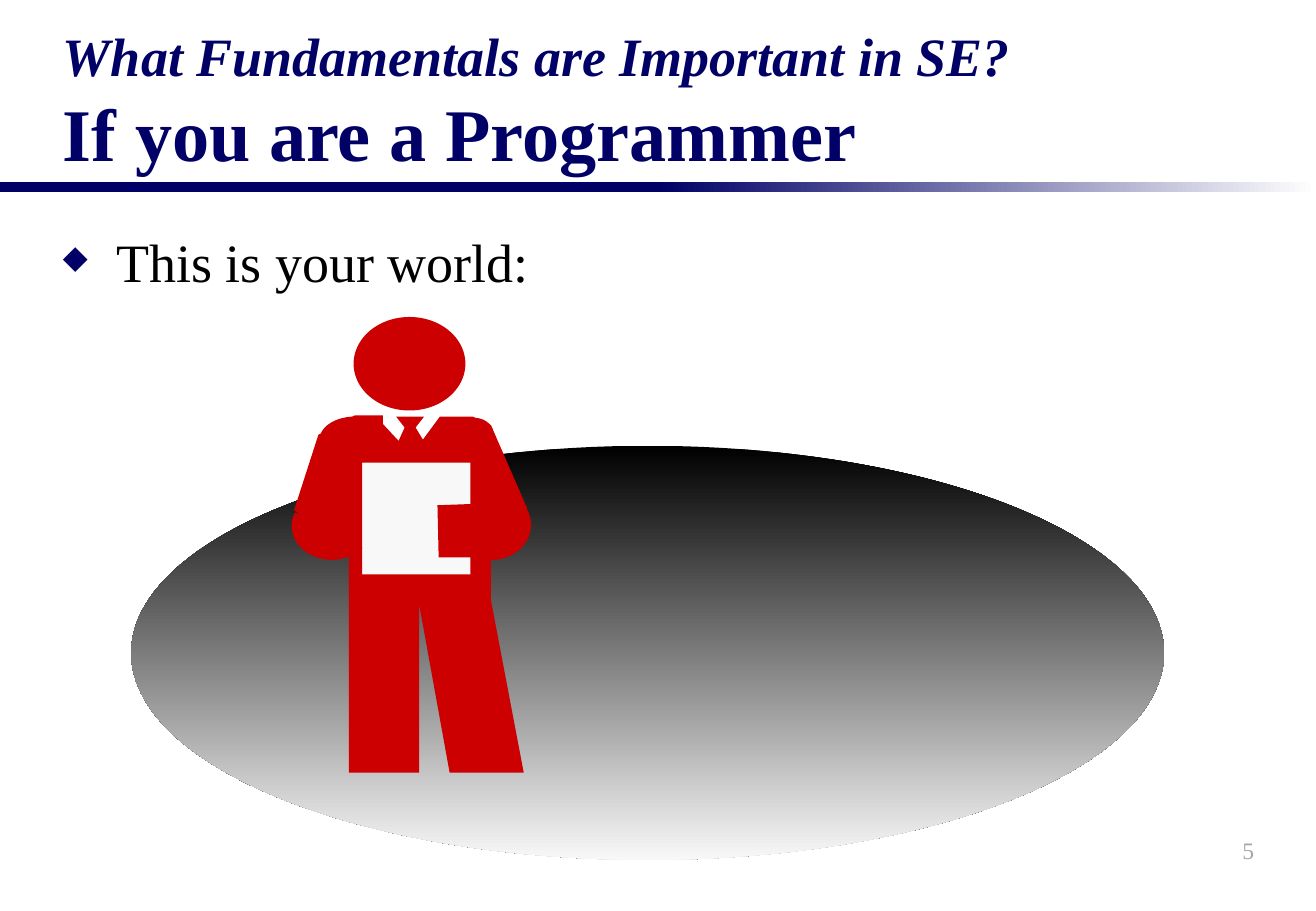
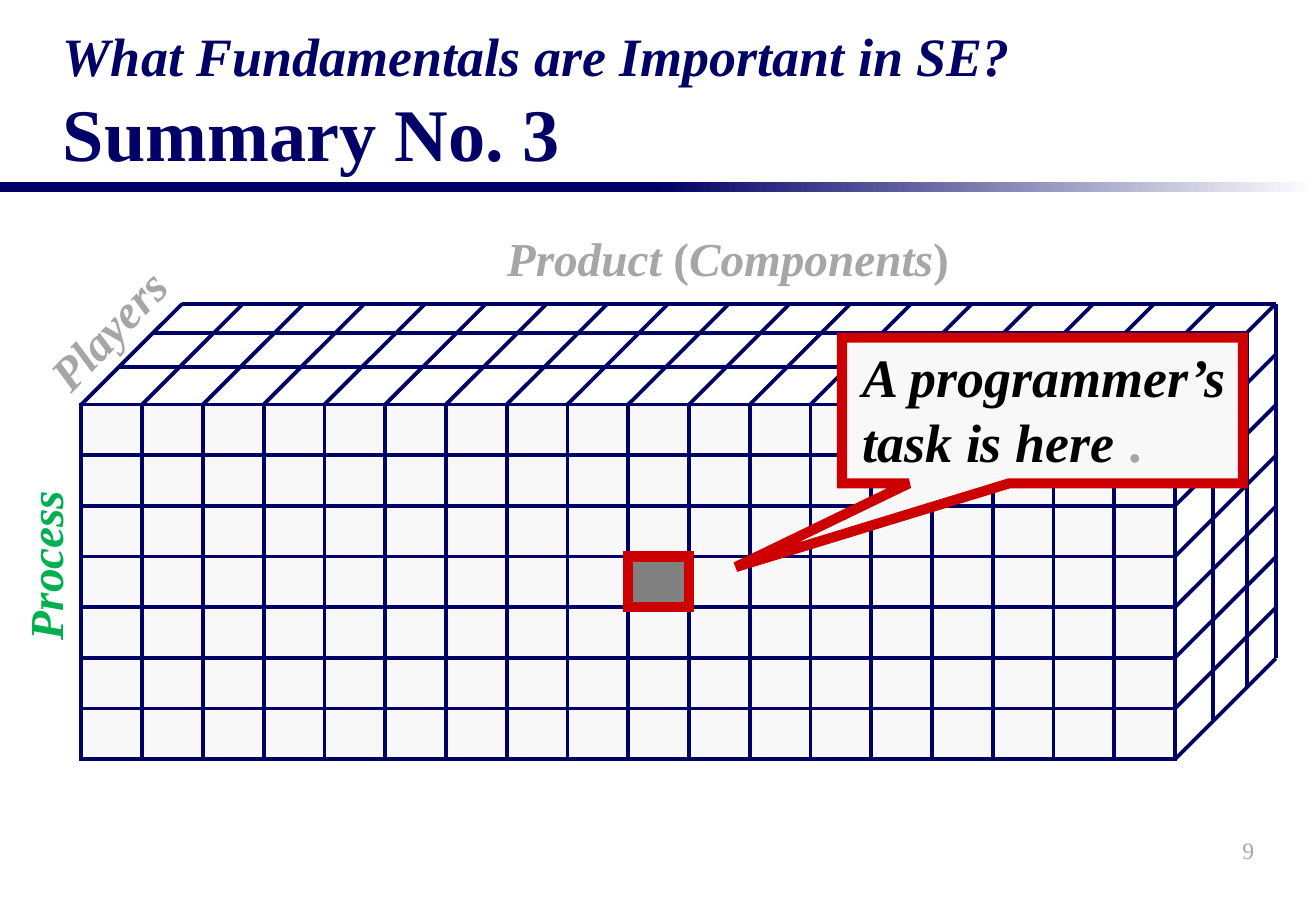
import dataclasses
import math
import typing

import pptx
import pptx.dml.color
import pptx.enum.shapes
import pptx.enum.text
import pptx.oxml.ns
import pptx.slide
import pptx.util
from lxml import etree

Inches = pptx.util.Inches
RGBColor = pptx.dml.color.RGBColor
Shapes = pptx.enum.shapes.MSO_SHAPE
Align = pptx.enum.text.PP_ALIGN
Anchor = pptx.enum.text.MSO_ANCHOR
qn = pptx.oxml.ns.qn

NAVY = RGBColor(0x00, 0x00, 0x66)
WHITE = RGBColor(0xFF, 0xFF, 0xFF)
BLACK = RGBColor(0x00, 0x00, 0x00)
PALE = RGBColor(0xF8, 0xF8, 0xF8)
RED = RGBColor(0xCC, 0x00, 0x00)
GREEN = RGBColor(0x00, 0xB0, 0x50)
LIGHT_GRAY = RGBColor(0xA6, 0xA6, 0xA6)
MID_GRAY = RGBColor(0x80, 0x80, 0x80)
FONT = "Times New Roman"
TOPIC = "What Fundamentals are Important in SE?"

SUIT_OUTLINE = [
    (3.33, 3.52), (3.28, 3.63), (3.15, 3.49), (3.15, 3.42), (2.92, 3.42),
    (2.62, 3.58), (2.42, 4.2), (2.66, 4.39), (2.87, 4.58), (2.87, 6.36),
    (3.45, 6.36), (3.45, 4.98), (3.7, 6.36), (4.31, 6.36), (4.04, 4.94),
    (4.04, 4.59), (4.34, 4.19), (3.87, 4.15), (3.6, 4.16), (3.61, 4.59),
    (3.87, 4.59), (3.87, 4.73), (2.98, 4.73), (2.98, 3.81), (3.87, 3.81),
    (3.87, 4.15), (4.34, 4.19), (4.04, 3.5), (3.89, 3.43), (3.62, 3.43),
    (3.48, 3.62), (3.42, 3.52), (3.49, 3.43), (3.26, 3.43),
]

CUBE_LEFT, CUBE_TOP = 0.67, 3.33
CUBE_WIDTH, CUBE_HEIGHT = 9.0, 2.92
COLUMNS, ROWS = 18, 7
COLUMN_WIDTH = CUBE_WIDTH / COLUMNS
ROW_HEIGHT = CUBE_HEIGHT / ROWS
DEPTHS = (0.31, 0.59, 0.83)


class Box(typing.NamedTuple):
    left: float
    top: float
    width: float
    height: float

    def lengths(self) -> list[int]:
        return [Inches(value) for value in self]


@dataclasses.dataclass(frozen=True)
class Run:
    text: str
    size: float
    color: RGBColor
    bold: bool = False
    italic: bool = False
    break_before: bool = False


@dataclasses.dataclass(frozen=True)
class Joint:
    center_x: float
    center_y: float
    radius_x: float
    radius_y: float
    start: int
    end: int

    def points(self) -> list[tuple[float, float]]:
        angles = [math.radians(self.start + (self.end - self.start) * step / 24)
                  for step in range(25)]
        arc = [(self.center_x + self.radius_x * math.cos(angle),
                self.center_y + self.radius_y * math.sin(angle)) for angle in angles]
        return [*arc, (self.center_x, self.center_y)]


JOINTS = [
    Joint(3.9, 3.57, 0.16, 0.13, -92, 0),
    Joint(2.92, 3.62, 0.29, 0.19, 174, 282),
    Joint(2.73, 4.33, 0.33, 0.28, 40, 203),
    Joint(4.05, 4.32, 0.32, 0.29, -67, 120),
]


def write_text(shape, runs: list[Run], *, align=Align.LEFT, anchor=Anchor.TOP,
               wrap: bool = True, margin: float = 0, indent: float = 0,
               bullet: str = "") -> None:
    frame = shape.text_frame
    frame.word_wrap = wrap
    frame.vertical_anchor = anchor
    paragraph = frame.paragraphs[0]
    paragraph.alignment = align
    properties = paragraph._p.get_or_add_pPr()
    if margin:
        properties.set("marL", str(Inches(margin)))
        properties.set("indent", str(Inches(indent)))
    if bullet:
        color = etree.SubElement(properties, qn("a:buClr"))
        etree.SubElement(color, qn("a:srgbClr"), val=str(NAVY))
        etree.SubElement(properties, qn("a:buSzPct"), val="60000")
        etree.SubElement(properties, qn("a:buChar"), char=bullet)
    for item in runs:
        if item.break_before:
            paragraph.add_line_break()
        run = paragraph.add_run()
        run.text = item.text
        run.font.name = FONT
        run.font.size = pptx.util.Pt(item.size)
        run.font.bold = item.bold
        run.font.italic = item.italic
        run.font.color.rgb = item.color


def add_text(slide: pptx.slide.Slide, box: Box, runs: list[Run], *,
             rotation: float = 0, **text_format):
    shape = slide.shapes.add_textbox(*box.lengths())
    shape.rotation = rotation
    write_text(shape, runs, **text_format)
    return shape


def paint(shape, fill: RGBColor, line: RGBColor | None = None, width: float = 0) -> None:
    shape.shadow.inherit = False
    shape.fill.solid()
    shape.fill.fore_color.rgb = fill
    if line is None:
        shape.line.fill.background()
        return
    shape.line.color.rgb = line
    shape.line.width = pptx.util.Pt(width)
    outline = shape._element.spPr.find(qn("a:ln"))
    etree.SubElement(outline, qn("a:miter"), lim="800000")


def add_shape(slide: pptx.slide.Slide, kind, box: Box, fill: RGBColor,
              line: RGBColor | None = None, width: float = 0):
    shape = slide.shapes.add_shape(kind, *box.lengths())
    paint(shape, fill, line, width)
    return shape


def add_gradient(slide: pptx.slide.Slide, kind, box: Box, first: RGBColor,
                 last: RGBColor, angle: float) -> None:
    shape = add_shape(slide, kind, box, first)
    shape.fill.gradient()
    shape.fill.gradient_angle = angle
    for stop, color in zip(shape.fill.gradient_stops, (first, last)):
        stop.color.rgb = color


def add_outline(slide: pptx.slide.Slide, points: list[tuple[float, float]],
                fill: RGBColor) -> None:
    corners = [(Inches(x), Inches(y)) for x, y in points]
    builder = slide.shapes.build_freeform(*corners[0])
    builder.add_line_segments(corners[1:], close=True)
    paint(builder.convert_to_shape(), fill)


def add_line(slide: pptx.slide.Slide, x1: float, y1: float, x2: float, y2: float) -> None:
    line = slide.shapes.add_connector(
        pptx.enum.shapes.MSO_CONNECTOR.STRAIGHT,
        Inches(x1), Inches(y1), Inches(x2), Inches(y2))
    line.line.color.rgb = NAVY
    line.line.width = pptx.util.Pt(2.25)
    etree.SubElement(line._element.spPr, qn("a:effectLst"))


def add_base_slide(presentation, title: str, number: str) -> pptx.slide.Slide:
    slide = presentation.slides.add_slide(presentation.slide_layouts[6])
    add_shape(slide, Shapes.RECTANGLE, Box(0, 1.5, 5.42, 0.08), NAVY)
    add_gradient(slide, Shapes.RECTANGLE, Box(5.41, 1.5, 5.42, 0.08), NAVY, WHITE, 0)
    add_text(slide, Box(8.16, 6.75, 2.26, 0.5), [Run(number, 14, LIGHT_GRAY)],
             align=Align.RIGHT, anchor=Anchor.MIDDLE)
    add_text(slide, Box(0.42, 0.29, 10, 1.21),
             [Run(TOPIC, 32, NAVY, bold=True, italic=True),
              Run(title, 44, NAVY, bold=True, break_before=True)],
             anchor=Anchor.BOTTOM)
    return slide


def build_programmer_slide(presentation) -> None:
    slide = add_base_slide(presentation, "If you are a Programmer", "5")
    add_text(slide, Box(0.42, 1.83, 10, 5.42), [Run("This is your world:", 32, BLACK)],
             margin=0.44, indent=-0.44, bullet="◆")
    add_gradient(slide, Shapes.OVAL, Box(1.08, 3.67, 8.5, 3.41), BLACK, PALE, 270)
    add_shape(slide, Shapes.RECTANGLE, Box(2.93, 3.79, 0.95, 0.99), PALE)
    add_shape(slide, Shapes.OVAL, Box(2.91, 2.61, 0.92, 0.77), RED)
    add_outline(slide, SUIT_OUTLINE, RED)
    for joint in JOINTS:
        add_outline(slide, joint.points(), RED)


def add_cube(slide: pptx.slide.Slide) -> None:
    right, bottom = CUBE_LEFT + CUBE_WIDTH, CUBE_TOP + CUBE_HEIGHT
    back = DEPTHS[-1]
    add_shape(slide, Shapes.RECTANGLE,
              Box(CUBE_LEFT, CUBE_TOP, CUBE_WIDTH, CUBE_HEIGHT), PALE, NAVY, 2.25)
    for row in range(ROWS + 1):
        y = CUBE_TOP + row * ROW_HEIGHT
        add_line(slide, CUBE_LEFT, y, right, y)
        add_line(slide, right, y, right + back, y - back)
    for column in range(COLUMNS):
        x = CUBE_LEFT + column * COLUMN_WIDTH
        add_line(slide, x, CUBE_TOP, x, bottom)
        add_line(slide, x, CUBE_TOP, x + back, CUBE_TOP - back)
    for depth in DEPTHS:
        add_line(slide, CUBE_LEFT + depth, CUBE_TOP - depth, right + depth, CUBE_TOP - depth)
        add_line(slide, right + depth, CUBE_TOP - depth, right + depth, bottom - depth)


def build_summary_slide(presentation) -> None:
    slide = add_base_slide(presentation, "Summary No. 3", "9")
    product = [Run(text, 28, LIGHT_GRAY, bold=True, italic=italic) for text, italic in
               [("Product ", True), ("(", False), ("Components", True), (")", False)]]
    axis_labels = [
        (Box(-0.35, 4.37, 1.44, 0.57), 270, [Run("Process", 28, GREEN, True, True)]),
        (Box(0.19, 2.43, 1.39, 0.57), 313.5, [Run("Players", 28, LIGHT_GRAY, True, True)]),
        (Box(4.07, 1.84, 3.84, 0.57), 0, product),
    ]
    for box, rotation, runs in axis_labels:
        add_text(slide, box, runs, rotation=rotation, align=Align.CENTER, wrap=False)
    add_cube(slide)
    task_cell = Box(CUBE_LEFT + 9 * COLUMN_WIDTH, CUBE_TOP + 3 * ROW_HEIGHT,
                    COLUMN_WIDTH, ROW_HEIGHT)
    add_shape(slide, Shapes.RECTANGLE, task_cell, MID_GRAY, RED, 6)
    callout = add_shape(slide, Shapes.RECTANGULAR_CALLOUT, Box(6.93, 2.78, 3.3, 1.2),
                        PALE, RED, 6)
    callout.adjustments[0] = -0.765
    callout.adjustments[1] = 1.074
    write_text(callout, [Run("A programmer’s task is here ", 32, BLACK, True, True),
                         Run(".", 32, LIGHT_GRAY, True)], margin=0.07)


def main() -> None:
    presentation = pptx.Presentation()
    presentation.slide_width = Inches(10.83)
    presentation.slide_height = Inches(7.5)
    build_programmer_slide(presentation)
    build_summary_slide(presentation)
    presentation.save("out.pptx")


if __name__ == "__main__":
    main()
